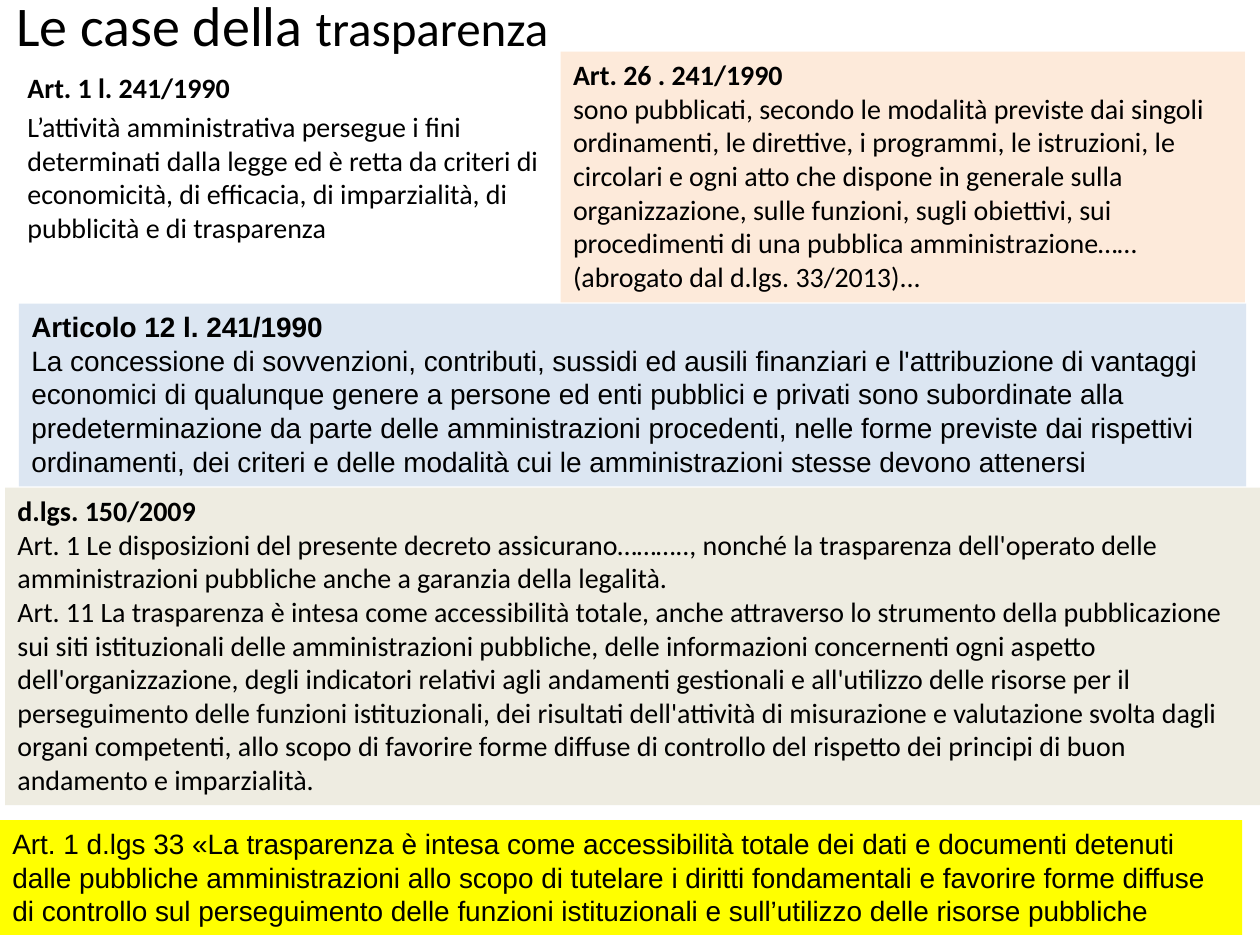
from pptx import Presentation
from pptx.dml.color import RGBColor
from pptx.enum.text import MSO_ANCHOR, MSO_AUTO_SIZE, PP_ALIGN
from pptx.util import Inches, Pt

BLACK = RGBColor(0, 0, 0)
PEACH = RGBColor(0xFD, 0xEA, 0xDA)
BLUE = RGBColor(0xDC, 0xE6, 0xF2)
SAND = RGBColor(0xEE, 0xEC, 0xE1)
YELLOW = RGBColor(0xFF, 0xFF, 0x00)

# box (left, top, width, height), fill, font, space before, heading, paragraphs
ARTICLES = [
    ((0.12, 0.51, 4.33, 1.92), None, "Calibri", 3.2, "Art. 1 l. 241/1990", [
        "L’attività amministrativa persegue i fini determinati dalla legge ed è "
        "retta da criteri di economicità, di efficacia, di imparzialità, di "
        "pubblicità e di trasparenza"]),
    ((4.45, 0.41, 5.43, 1.99), PEACH, "Calibri", 0, "Art. 26 . 241/1990", [
        "sono pubblicati, secondo le modalità previste dai singoli ordinamenti, "
        "le direttive, i programmi, le istruzioni, le circolari e ogni atto che "
        "dispone in generale sulla organizzazione, sulle funzioni, sugli "
        "obiettivi, sui procedimenti di una pubblica amministrazione……"
        "(abrogato dal d.lgs. 33/2013)..."]),
    ((0.04, 3.87, 9.96, 2.52), SAND, "Calibri", 0, "d.lgs. 150/2009", [
        "Art. 1 Le disposizioni del presente decreto assicurano……….., nonché la "
        "trasparenza dell'operato delle amministrazioni pubbliche anche a "
        "garanzia della legalità.",
        "Art. 11 La trasparenza è intesa come accessibilità totale, anche "
        "attraverso lo strumento della pubblicazione sui siti istituzionali "
        "delle amministrazioni pubbliche, delle informazioni concernenti ogni "
        "aspetto dell'organizzazione, degli indicatori relativi agli andamenti "
        "gestionali e all'utilizzo delle risorse per il perseguimento delle "
        "funzioni istituzionali, dei risultati dell'attività di misurazione e "
        "valutazione svolta dagli organi competenti, allo scopo di favorire "
        "forme diffuse di controllo del rispetto dei principi di buon andamento "
        "e imparzialità."]),
    ((0.15, 2.41, 9.74, 1.45), BLUE, "Arial", 0, "Articolo 12 l. 241/1990", [
        "La concessione di sovvenzioni, contributi, sussidi ed ausili finanziari "
        "e l'attribuzione di vantaggi economici di qualunque genere a persone ed "
        "enti pubblici e privati sono subordinate alla predeterminazione da "
        "parte delle amministrazioni procedenti, nelle forme previste dai "
        "rispettivi ordinamenti, dei criteri e delle modalità cui le "
        "amministrazioni stesse devono attenersi"]),
    ((0, 6.51, 9.86, 0.91), YELLOW, "Arial", 0, None, [
        "Art. 1 d.lgs 33 «La trasparenza è intesa come accessibilità totale dei "
        "dati e documenti detenuti dalle pubbliche amministrazioni allo scopo di "
        "tutelare i diritti fondamentali e favorire forme diffuse di controllo "
        "sul perseguimento delle funzioni istituzionali e sull’utilizzo delle "
        "risorse pubbliche"]),
]


def set_title(s, box):
    title = s.shapes.title
    title.left, title.top, title.width, title.height = map(Inches, box)
    tf = title.text_frame
    tf.auto_size = MSO_AUTO_SIZE.NONE
    tf.vertical_anchor = MSO_ANCHOR.MIDDLE
    p = tf.paragraphs[0]
    p.alignment = PP_ALIGN.LEFT
    p.font.name = "Calibri"
    p.font.color.rgb = BLACK
    for text, size in (("Le case della ", 32), ("trasparenza", 28)):
        r = p.add_run()
        r.text = text
        r.font.size = Pt(size)


def add_article(s, box, fill, font, space, heading, paragraphs):
    sp = s.shapes.add_textbox(*map(Inches, box))
    if fill is not None:
        sp.fill.solid()
        sp.fill.fore_color.rgb = fill
    tf = sp.text_frame
    tf.word_wrap = True
    texts = [heading, *paragraphs] if heading else paragraphs
    for i, text in enumerate(texts):
        p = tf.paragraphs[0] if i == 0 else tf.add_paragraph()
        p.text = text
        p.space_before = Pt(space)
        p.font.name = font
        p.font.size = Pt(16)
        p.font.bold = text == heading
        p.font.color.rgb = BLACK


def main():
    prs = Presentation()
    prs.slide_width, prs.slide_height = Inches(10), Inches(7.5)
    s = prs.slides.add_slide(prs.slide_layouts[5])
    set_title(s, (0.03, -0.05, 9, 0.49))
    for article in ARTICLES:
        add_article(s, *article)
    prs.save("out.pptx")


if __name__ == "__main__":
    main()
